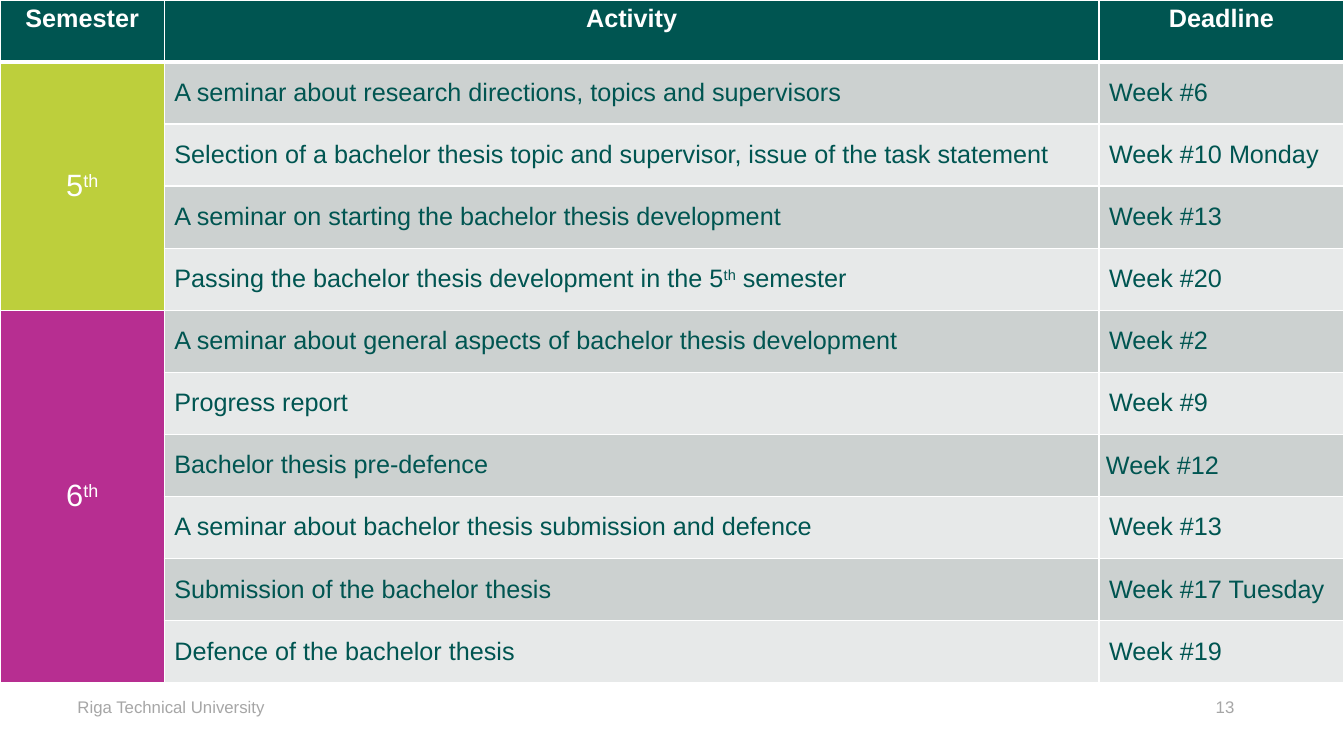
import pptx
import pptx.dml.color
import pptx.enum.text
import pptx.oxml
import pptx.oxml.ns
import pptx.util
from lxml import etree

RGBColor = pptx.dml.color.RGBColor
Inches = pptx.util.Inches
Pt = pptx.util.Pt
ALIGN = pptx.enum.text.PP_ALIGN
ANCHOR = pptx.enum.text.MSO_ANCHOR

WHITE = RGBColor(0xFF, 0xFF, 0xFF)
DARK_GREEN = RGBColor(0x00, 0x55, 0x51)
LIME = RGBColor(0xBD, 0xCF, 0x3C)
MAGENTA = RGBColor(0xB7, 0x2E, 0x91)
BANDS = [RGBColor(0xCC, 0xD1, 0xD0), RGBColor(0xE7, 0xE9, 0xE9)]
FOOTER_GRAY = RGBColor(0xA6, 0xA6, 0xA6)

SLIDE_WIDTH, SLIDE_HEIGHT = Inches(13.33), Inches(7.5)
TABLE_HEIGHT = Inches(6.77)
SEMESTER_WIDTH, ACTIVITY_WIDTH = Inches(1.63), Inches(9.27)

HEADER_FONT = {"size": Pt(18), "bold": True, "color": WHITE}
SEMESTER_FONT = {"size": Pt(22), "bold": False, "color": WHITE}
BODY_FONT = {"size": Pt(18), "bold": False, "color": DARK_GREEN}
FOOTER_FONT = {"size": Pt(12), "bold": False, "color": FOOTER_GRAY}

HEADINGS = ["Semester", "Activity", "Deadline"]
# Text between two carets is superscript.
SEMESTERS = [
    ("5^th^", LIME, [
        ("A seminar about research directions, topics and supervisors", "Week #6"),
        ("Selection of a bachelor thesis topic and supervisor, issue of the task statement",
         "Week #10 Monday"),
        ("A seminar on starting the bachelor thesis development", "Week #13"),
        ("Passing the bachelor thesis development in the 5^th^ semester", "Week #20"),
    ]),
    ("6^th^", MAGENTA, [
        ("A seminar about general aspects of bachelor thesis development", "Week #2"),
        ("Progress report", "Week #9"),
        ("Bachelor thesis pre-defence", "Week #12"),
        ("A seminar about bachelor thesis submission and defence", "Week #13"),
        ("Submission of the bachelor thesis", "Week #17 Tuesday"),
        ("Defence of the bachelor thesis", "Week #19"),
    ]),
]


def write_text(paragraph, text, font_format, alignment=ALIGN.LEFT):
    """Write text as runs, raising the parts between carets."""
    paragraph.alignment = alignment
    for index, part in enumerate(text.split("^")):
        if not part:
            continue
        run = paragraph.add_run()
        run.text = part
        run.font.name = "Arial"
        for name, value in font_format.items():
            if name == "color":
                run.font.color.rgb = value
            else:
                setattr(run.font, name, value)
        if index % 2:
            run._r.get_or_add_rPr().set("baseline", "30000")


def set_borders(cell, bottom_width):
    properties = cell._tc.get_or_add_tcPr()
    widths = {"lnL": 1, "lnR": 1, "lnT": 1, "lnB": bottom_width}
    for tag, width in widths.items():
        line = etree.SubElement(properties, pptx.oxml.ns.qn(f"a:{tag}"), w=str(Pt(width)))
        fill = etree.SubElement(line, pptx.oxml.ns.qn("a:solidFill"))
        etree.SubElement(fill, pptx.oxml.ns.qn("a:srgbClr"), val=str(WHITE))


def format_cell(cell, text, color, font_format, alignment=ALIGN.LEFT,
                anchor=ANCHOR.MIDDLE):
    cell.fill.solid()
    cell.fill.fore_color.rgb = color
    cell.vertical_anchor = anchor
    write_text(cell.text_frame.paragraphs[0], text, font_format, alignment)


def tighten_cell(cell):
    margins = {"margin_left": 0.07, "margin_right": 0.07, "margin_top": 0, "margin_bottom": 0}
    for name, value in margins.items():
        setattr(cell, name, Inches(value))
    cell.text_frame.paragraphs[0].line_spacing = 1.07


def add_schedule(slide, left, top, width, height):
    row_count = 1 + sum(len(activities) for _, _, activities in SEMESTERS)
    table = slide.shapes.add_table(
        row_count, len(HEADINGS), left, top, width, height).table
    column_widths = [SEMESTER_WIDTH, ACTIVITY_WIDTH, width - SEMESTER_WIDTH - ACTIVITY_WIDTH]
    for column, column_width in zip(table.columns, column_widths):
        column.width = column_width
    for index, row in enumerate(table.rows):
        row.height = height // row_count
        for cell in row.cells:
            set_borders(cell, 1 if index else 3)

    for column, heading in enumerate(HEADINGS):
        format_cell(table.cell(0, column), heading, DARK_GREEN, HEADER_FONT,
                    ALIGN.CENTER, ANCHOR.TOP)

    row = 1
    for semester, color, activities in SEMESTERS:
        semester_cell = table.cell(row, 0)
        semester_cell.merge(table.cell(row + len(activities) - 1, 0))
        format_cell(semester_cell, semester, color, SEMESTER_FONT, ALIGN.CENTER)
        for activity, deadline in activities:
            band = BANDS[(row - 1) % 2]
            format_cell(table.cell(row, 1), activity, band, BODY_FONT)
            format_cell(table.cell(row, 2), deadline, band, BODY_FONT)
            if deadline == "Week #12":
                tighten_cell(table.cell(row, 2))
            row += 1


def add_footer(slide, top, height):
    parts = [("Riga Technical University", 0.67, 3.6), ("13", 11.96, 0.7)]
    for text, left, width in parts:
        box = slide.shapes.add_textbox(Inches(left), top, Inches(width), height)
        box.text_frame.word_wrap = True
        write_text(box.text_frame.paragraphs[0], text, FOOTER_FONT)


def main():
    presentation = pptx.Presentation()
    presentation.slide_width, presentation.slide_height = SLIDE_WIDTH, SLIDE_HEIGHT
    blank_layout = presentation.slide_layouts[6]
    slide = presentation.slides.add_slide(blank_layout)
    add_footer(slide, Inches(6.86), Inches(0.4))
    add_schedule(slide, 0, 0, SLIDE_WIDTH, TABLE_HEIGHT)
    presentation.save("out.pptx")


if __name__ == "__main__":
    main()
